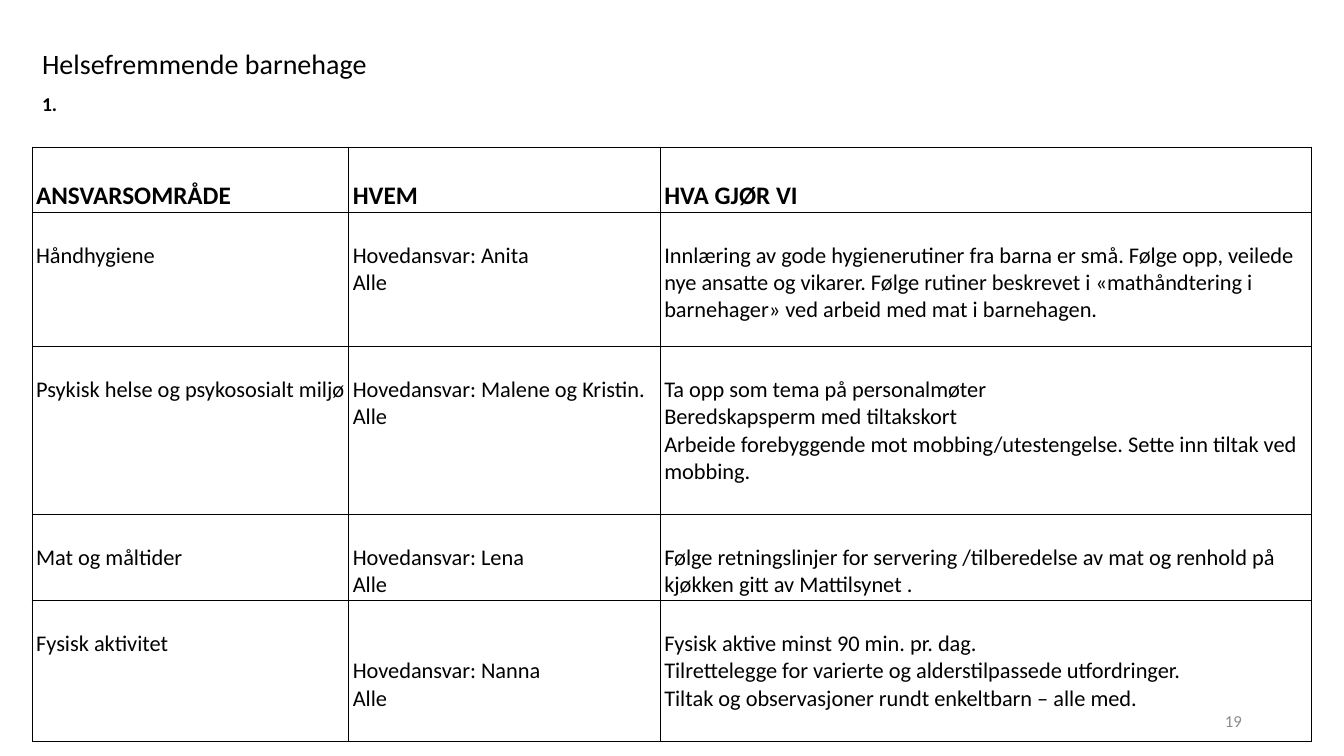
from lxml import etree
from pptx import Presentation
from pptx.dml.color import RGBColor as RGB
from pptx.enum.text import MSO_ANCHOR as Anchor, PP_ALIGN as Align
from pptx.oxml.ns import qn
from pptx.util import Cm, Pt

COLORS = {"ink": "000000", "grey": "8C8C8C"}
FONT = "Calibri"
BLANK = 6

COLS = [7.98, 7.85, 16.41]
ROWS = [1.63, 3.38, 4.23, 2.17, 3.55]
HEAD_GAP, LINE = 0.83, 0.69
CELLS = [
    [["ANSVARSOMRÅDE"], ["HVEM"], ["HVA GJØR VI"]],
    [["Håndhygiene"],
     ["Hovedansvar: Anita", "Alle"],
     ["Innlæring av gode hygienerutiner fra barna er små. Følge opp, veilede "
      "nye ansatte og vikarer. Følge rutiner beskrevet i «mathåndtering i "
      "barnehager» ved arbeid med mat i barnehagen."]],
    [["Psykisk helse og psykososialt miljø"],
     ["Hovedansvar: Malene og Kristin.", "Alle"],
     ["Ta opp som tema på personalmøter",
      "Beredskapsperm med tiltakskort",
      "Arbeide forebyggende mot mobbing/utestengelse. Sette inn tiltak ved mobbing."]],
    [["Mat og måltider"],
     ["Hovedansvar: Lena", "Alle"],
     ["Følge retningslinjer for servering /tilberedelse av mat og renhold på "
      "kjøkken gitt av Mattilsynet ."]],
    [["Fysisk aktivitet"],
     ["Hovedansvar: Nanna", "Alle"],
     ["Fysisk aktive minst 90 min. pr. dag.",
      "Tilrettelegge for varierte og alderstilpassede utfordringer.",
      "Tiltak og observasjoner rundt enkeltbarn – alle med."]],
]


def add_lines(frame, lines, size, bold=False, color="ink"):
    """Write each line as its own paragraph."""
    frame.word_wrap = True
    for i, line in enumerate(lines):
        para = frame.add_paragraph() if i else frame.paragraphs[0]
        run = para.add_run()
        run.text = line
        run.font.name = FONT
        run.font.size = Pt(size)
        run.font.bold = bold
        run.font.color.rgb = RGB.from_string(COLORS[color])


def add_border(cell):
    props = cell._tc.get_or_add_tcPr()
    for i, side in enumerate(("lnL", "lnR", "lnT", "lnB")):
        edge = etree.Element(qn(f"a:{side}"), w=str(Pt(1)))
        fill = etree.SubElement(edge, qn("a:solidFill"))
        etree.SubElement(fill, qn("a:srgbClr"), val=COLORS["ink"])
        props.insert(i, edge)


prs = Presentation()
prs.slide_width, prs.slide_height = Cm(33.87), Cm(19.05)
slide = prs.slides.add_slide(prs.slide_layouts[BLANK])
shapes = slide.shapes

# Heading
title = shapes.add_textbox(Cm(0.81), Cm(1.14), Cm(29.2), Cm(2.39)).text_frame
add_lines(title, ["Helsefremmende barnehage", "1."], 20)
for para in title.paragraphs:
    para.line_spacing = 0.9
point = title.paragraphs[1]
point.space_before = Pt(10)
point.runs[0].font.size = Pt(14)
point.runs[0].font.bold = True

# Page number
number = shapes.add_textbox(Cm(23.93), Cm(17.65), Cm(7.62), Cm(1.02)).text_frame
add_lines(number, ["19"], 12, color="grey")
number.vertical_anchor = Anchor.MIDDLE
number.paragraphs[0].alignment = Align.RIGHT

# Table of duties
table = shapes.add_table(len(ROWS), len(COLS), Cm(0.81), Cm(3.71),
                         Cm(sum(COLS)), Cm(sum(ROWS))).table
table.first_row = table.horz_banding = False
for col, width in zip(table.columns, COLS):
    col.width = Cm(width)
for r, height in enumerate(ROWS):
    table.rows[r].height = Cm(height)
    for c, lines in enumerate(CELLS[r]):
        cell = table.cell(r, c)
        cell.margin_left = cell.margin_right = Cm(0.1)
        cell.margin_bottom = Cm(0.05)
        cell.margin_top = Cm(HEAD_GAP if r == 0 else LINE + 0.05)
        cell.fill.background()
        add_border(cell)
        add_lines(cell.text_frame, lines, 16 if r else 18, bold=r == 0)

# The last duty names its people one line lower
table.cell(4, 1).margin_top = Cm(2 * LINE + 0.05)

prs.save("out.pptx")
